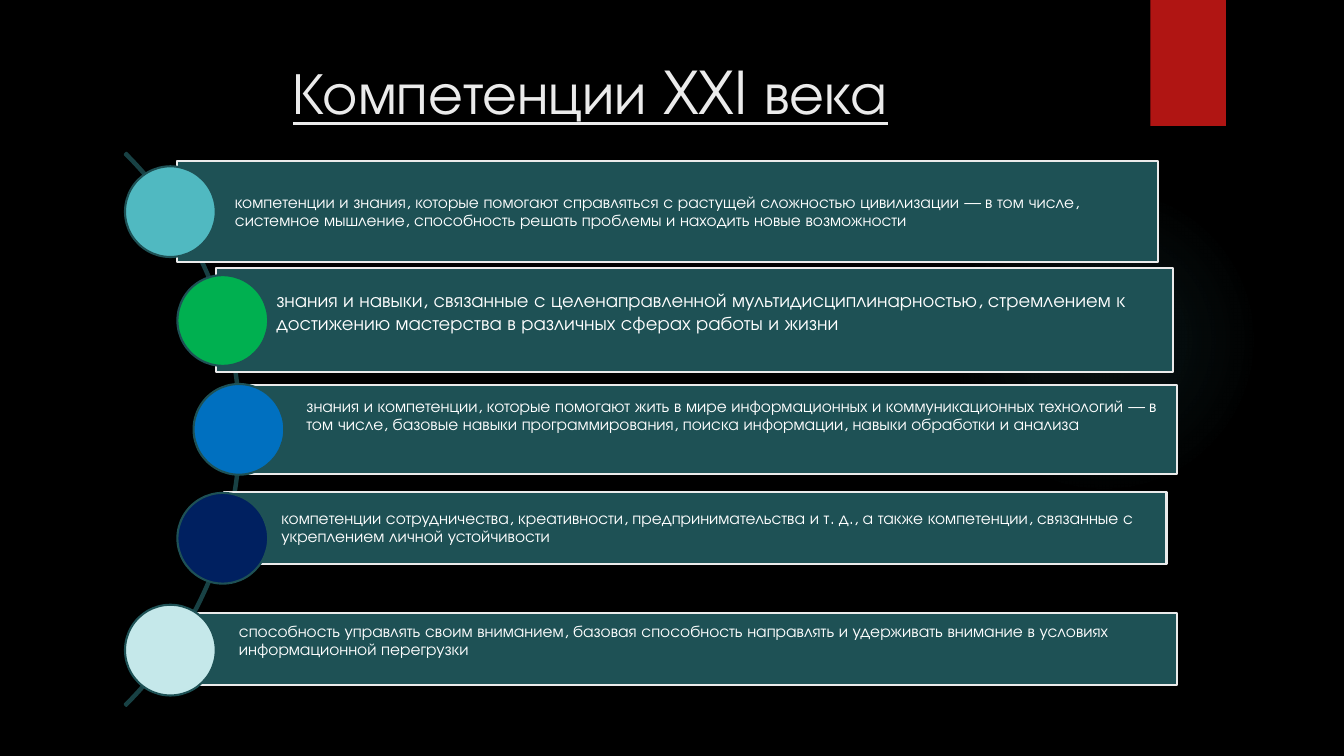
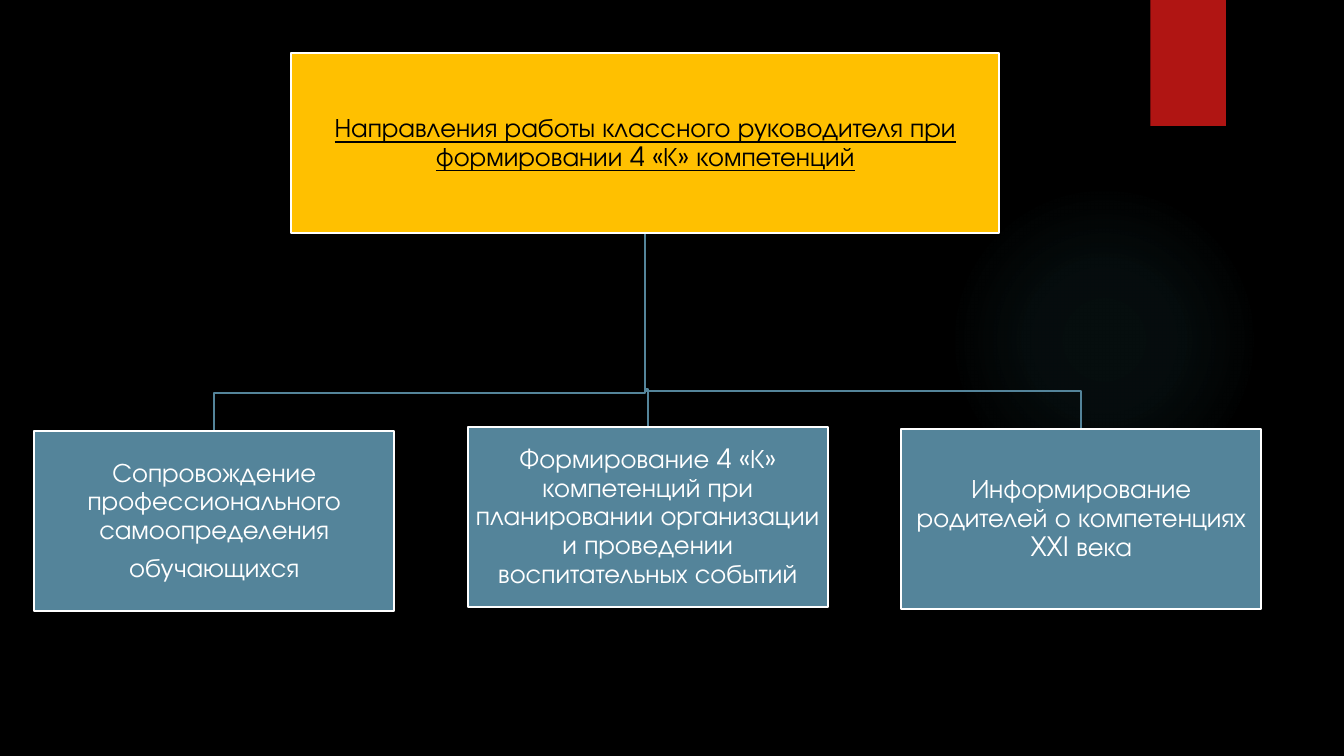
from pptx import Presentation
from pptx.dml.color import RGBColor
from pptx.enum.shapes import MSO_SHAPE as Shape
from pptx.enum.text import MSO_ANCHOR as Anchor, MSO_AUTO_SIZE as AutoSize, PP_ALIGN as Align
from pptx.oxml import parse_xml
from pptx.oxml.ns import nsdecls
from pptx.util import Inches, Pt

# Shared look
FONT = "TeX Gyre Adventor"
BLACK, WHITE, PALE = "000000", "FFFFFF", "EBEBEB"
RED, AQUA, TEAL, DARK_TEAL = "B01513", "50B9C1", "1E5155", "184144"
STEEL, AMBER = "54849A", "FFC000"
TITLE_ONLY, BLANK = 5, 6

# Competence list: bar box, circle left and top, circle colour, text, text options
DISC = 0.9
COMPETENCES = [
    ((1.76, 1.6, 9.73, 1), (1.24, 1.65), AQUA,
     "компетенции и знания, которые помогают справляться с растущей сложностью "
     "цивилизации — в том числе, системное мышление, способность решать проблемы "
     "и находить новые возможности", {}),
    ((2.14, 2.66, 9.49, 1.03), (1.76, 2.73), "00B050",
     "знания и навыки, связанные с целенаправленной мультидисциплинарностью, "
     "стремлением к достижению мастерства в различных сферах работы и жизни",
     {"size": 14, "spacing": 1, "insets": (0.6, 0.03, 0.24, 0.21)}),
    ((2.47, 3.82, 9.2, 0.88), (1.92, 3.81), "0070C0",
     "знания и компетенции, которые помогают жить в мире информационных и "
     "коммуникационных технологий — в том числе, базовые навыки программирования, "
     "поиска информации, навыки обработки и анализа",
     {"insets": (0.57, 0.03, 0.03, 0.29)}),
    ((2.22, 4.88, 9.35, 0.72), (1.76, 4.89), "002060",
     "компетенции сотрудничества, креативности, предпринимательства и т. д., а также "
     "компетенции, связанные с укреплением личной устойчивости", {}),
    ((1.8, 6.08, 9.87, 0.72), (1.24, 6), "C5E8EA",
     "способность управлять своим вниманием, базовая способность направлять и "
     "удерживать внимание в условиях информационной перегрузки",
     {"insets": (0.57, 0.03, 0.03, 0.19)}),
]

# Work directions: box top and paragraphs
DIRECTIONS = [
    (4.28, ["Сопровождение профессионального самоопределения", "обучающихся"]),
    (4.24, ["Формирование 4 «К» компетенций при планировании организации и проведении "
            "воспитательных событий"]),
    (4.26, ["Информирование родителей о компетенциях XXI века"]),
]


def rgb(code):
    return RGBColor.from_string(code)


def paint(shape, fill=None, line=None):
    """Set fill and outline; None leaves the part empty."""
    shape.shadow.inherit = False
    if fill:
        shape.fill.solid()
        shape.fill.fore_color.rgb = rgb(fill)
    else:
        shape.fill.background()
    if line:
        shape.line.color.rgb = rgb(line)
        shape.line.width = Pt(1.5)
    else:
        shape.line.fill.background()
    return shape


def add_figure(slide, kind, box, fill=None, line=None):
    return paint(slide.shapes.add_shape(kind, *map(Inches, box)), fill, line)


def write(shape, *paragraphs, size=12, color=WHITE, align=Align.LEFT, anchor=Anchor.MIDDLE,
          spacing=0.9, underline=None, insets=(0.57, 0.03, 0.03, 0.03)):
    """Fill a shape with formatted paragraphs."""
    frame = shape.text_frame
    frame.word_wrap = True
    frame.auto_size = AutoSize.NONE
    frame.vertical_anchor = anchor
    (frame.margin_left, frame.margin_top,
     frame.margin_right, frame.margin_bottom) = map(Inches, insets)
    for index, text in enumerate(paragraphs):
        paragraph = frame.add_paragraph() if index else frame.paragraphs[0]
        paragraph.alignment = align
        paragraph.line_spacing = spacing
        if index:
            paragraph.space_before = Pt(round(0.35 * size, 1))
        run = paragraph.add_run()
        run.text = text
        run.font.name = FONT
        run.font.size = Pt(size)
        run.font.color.rgb = rgb(color)
        run.font.underline = underline


def add_elbow(slide, start, end, turn):
    """Draw a line down to the turn, across, and down to the end."""
    (x1, y1), (x2, y2) = start, end
    points = [tuple(map(Inches, p)) for p in ((x1, turn), (x2, turn), (x2, y2))]
    outline = slide.shapes.build_freeform(Inches(x1), Inches(y1))
    outline.add_line_segments(points, close=False)
    paint(outline.convert_to_shape(), line=STEEL)


def decorate_master(master, slide):
    """Give the master its background, faint glow and red tab."""
    master.background.fill.solid()
    master.background.fill.fore_color.rgb = rgb(BLACK)

    glow = add_figure(slide, Shape.OVAL, (9.41, 1.83, 3.08, 3.08))
    stops = "".join(
        f'<a:gs pos="{pos * 1000}"><a:srgbClr val="{AQUA}"><a:alpha val="{alpha * 1000}"/>'
        f'</a:srgbClr></a:gs>' for pos, alpha in ((0, 7), (36, 6), (69, 0)))
    gradient = parse_xml(
        f'<a:gradFill {nsdecls("a")}><a:gsLst>{stops}</a:gsLst><a:path path="circle">'
        '<a:fillToRect l="50000" t="50000" r="50000" b="50000"/></a:path></a:gradFill>')
    no_fill = glow.element.spPr.find("{*}noFill")
    glow.element.spPr.replace(no_fill, gradient)

    tab = add_figure(slide, Shape.RECTANGLE, (11.41, 0, 0.75, 1.25), RED)
    tab.element.spPr.find("{*}effectLst").append(parse_xml(
        f'<a:outerShdw {nsdecls("a")} blurRad="{Pt(3)}" dist="{Pt(2)}" dir="5400000" '
        f'rotWithShape="0"><a:srgbClr val="{BLACK}"><a:alpha val="45000"/></a:srgbClr>'
        '</a:outerShdw>'))

    for number, part in enumerate((glow, tab), 101):
        part.element.nvSpPr.cNvPr.set("id", str(number))
        master.shapes.element.append(part.element)


def fill_competences(slide):
    # Title
    title = slide.shapes.title
    title.left, title.top, title.width, title.height = map(Inches, (0.71, 0.5, 10.29, 1.53))
    write(title, "Компетенции XXI века", size=42, color=PALE, align=Align.CENTER,
          anchor=Anchor.TOP, spacing=1, underline=True, insets=(0.1, 0.05, 0.1, 0.05))

    # Arc behind the list
    arc = add_figure(slide, Shape.BLOCK_ARC, (-5.37, 0.38, 7.76, 7.76), line=DARK_TEAL)
    for index, value in enumerate((189, 27, 0.003)):
        arc.adjustments[index] = value

    # Bars with their circles
    for bar_box, corner, color, text, options in COMPETENCES:
        bar = add_figure(slide, Shape.RECTANGLE, bar_box, TEAL, PALE)
        write(bar, text, **options)
        add_figure(slide, Shape.OVAL, (*corner, DISC, DISC), color, TEAL)


def fill_directions(slide):
    left, step, width, height = 0.34, 4.3, 3.57, 1.78
    root_box = (2.89, 0.53, 7.02, height)
    root_foot = (root_box[0] + root_box[2] / 2, root_box[1] + height)
    style = {"size": 19, "align": Align.CENTER, "insets": (0.01,) * 4}

    # Branches go under the boxes
    for index, (top, _) in enumerate(DIRECTIONS):
        add_elbow(slide, root_foot, (left + index * step + width / 2, top), top - 0.38)

    # Root and its directions
    root = add_figure(slide, Shape.RECTANGLE, root_box, AMBER, WHITE)
    write(root, "Направления работы классного руководителя при формировании 4 «К» компетенций",
          color=BLACK, underline=True, **style)
    for index, (top, paragraphs) in enumerate(DIRECTIONS):
        direction = add_figure(slide, Shape.RECTANGLE,
                               (left + index * step, top, width, height), STEEL, WHITE)
        write(direction, *paragraphs, **style)


def main():
    prs = Presentation()
    prs.slide_width, prs.slide_height = Inches(13.33), Inches(7.5)
    competences = prs.slides.add_slide(prs.slide_layouts[TITLE_ONLY])
    directions = prs.slides.add_slide(prs.slide_layouts[BLANK])
    decorate_master(prs.slide_master, competences)
    fill_competences(competences)
    fill_directions(directions)
    prs.save("out.pptx")


if __name__ == "__main__":
    main()
